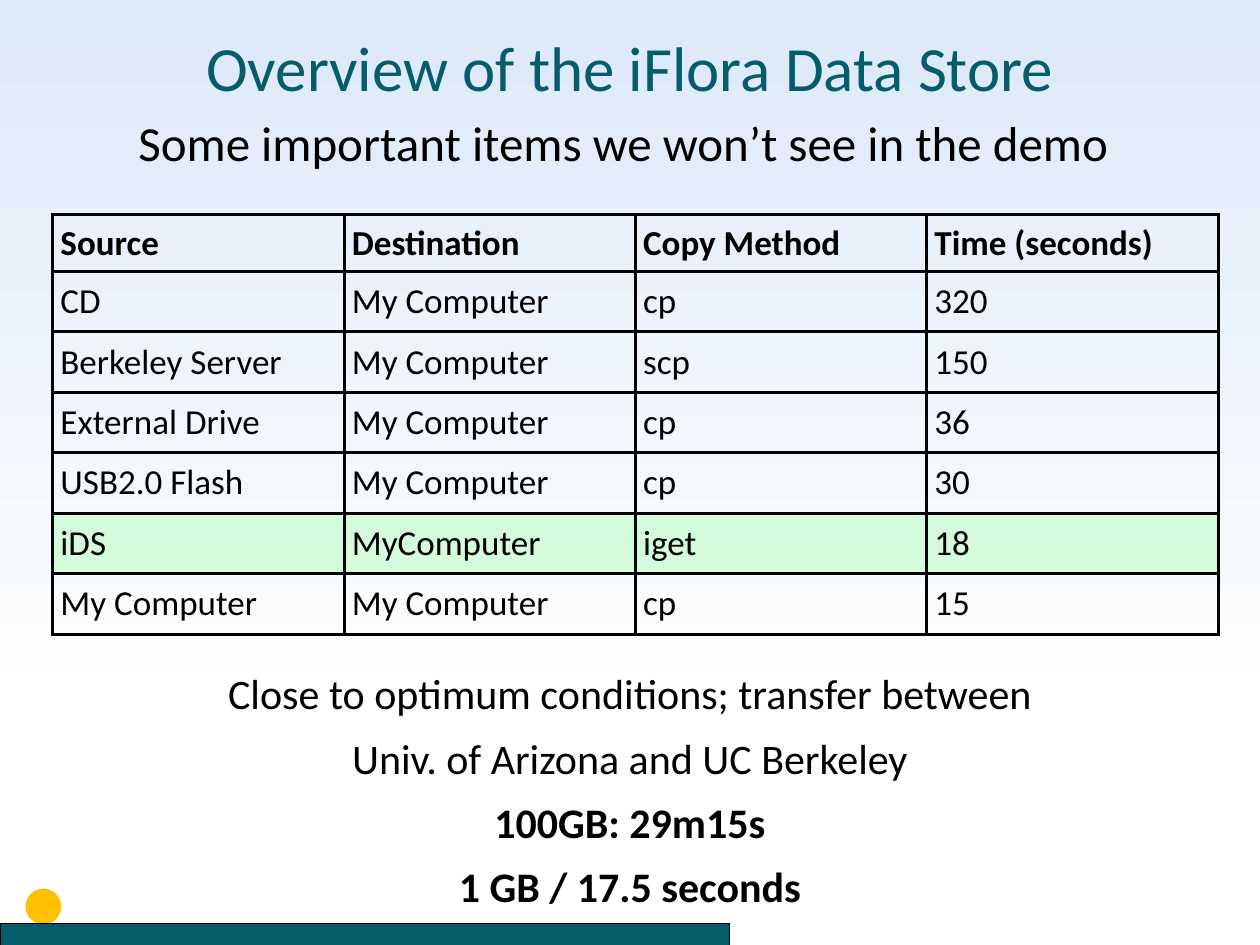
import pptx
import pptx.dml.color
import pptx.enum.shapes
import pptx.enum.text
import pptx.oxml
import pptx.oxml.ns
import pptx.util
import lxml.etree
from pptx.util import Inches

BLACK, TEAL, GOLD = "000000", "055C6B", "FFC000"


def color(hex_code):
    return pptx.dml.color.RGBColor.from_string(hex_code)


def style(paragraph, size, hex_code=BLACK, bold=False):
    paragraph.font.name = "Calibri"
    paragraph.font.size = pptx.util.Pt(size)
    paragraph.font.bold = bold
    paragraph.font.color.rgb = color(hex_code)


presentation = pptx.Presentation()
presentation.slide_width, presentation.slide_height = Inches(10), Inches(7.5)
slide = presentation.slides.add_slide(presentation.slide_layouts[6])

# Background: pale blue fading to white three quarters down
background = slide.background.fill
background.gradient()
background.gradient_angle = 270
for stop, position, hex_code in zip(background.gradient_stops, (0, 0.75), ("DCE9F9", "FFFFFF")):
    stop.position = position
    stop.color.rgb = color(hex_code)

# Footer dot and bar
SHAPES = pptx.enum.shapes.MSO_SHAPE
for kind, box, fill, outline, weight in [
    (SHAPES.OVAL, (0.21, 7.06, 0.27, 0.27), GOLD, GOLD, 1),
    (SHAPES.RECTANGLE, (0, 7.33, 5.79, 0.26), TEAL, BLACK, 0.75),
]:
    ornament = slide.shapes.add_shape(kind, *map(Inches, box))
    ornament.shadow.inherit = False
    ornament.fill.solid()
    ornament.fill.fore_color.rgb = color(fill)
    ornament.line.color.rgb = color(outline)
    ornament.line.width = pptx.util.Pt(weight)

# Title, subtitle and closing notes: box, wrap, size, colour, (line, bold)
CENTER, LEFT = pptx.enum.text.PP_ALIGN.CENTER, pptx.enum.text.PP_ALIGN.LEFT
for box, wrap, align, size, hex_code, lines in [
    ((0, 0.18, 10, 1.24), True, CENTER, 36, TEAL,
     [("Overview of the iFlora Data Store", False)]),
    ((1, 0.84, 7.98, 0.57), False, LEFT, 28, BLACK,
     [("Some important items we won’t see in the demo", False)]),
    ((0, 5.25, 10, 1.29), True, CENTER, 24, BLACK,
     [("Close to optimum conditions; transfer between", False),
      ("Univ. of Arizona and UC Berkeley", False),
      ("100GB: 29m15s", True),
      ("1 GB / 17.5 seconds", True)]),
]:
    frame = slide.shapes.add_textbox(*map(Inches, box)).text_frame
    frame.word_wrap = wrap
    for index, (line, bold) in enumerate(lines):
        paragraph = frame.add_paragraph() if index else frame.paragraphs[0]
        paragraph.text = line
        paragraph.alignment = align
        if index:
            paragraph.space_before = pptx.util.Pt(8)
        style(paragraph, size, hex_code, bold)

# Transfer times
transfers = [
    ("Source", "Destination", "Copy Method", "Time (seconds)"),
    ("CD", "My Computer", "cp", "320"),
    ("Berkeley Server", "My Computer", "scp", "150"),
    ("External Drive", "My Computer", "cp", "36"),
    ("USB2.0 Flash", "My Computer", "cp", "30"),
    ("iDS", "MyComputer", "iget", "18"),
    ("My Computer", "My Computer", "cp", "15"),
]
times = slide.shapes.add_table(
    len(transfers), 4, Inches(0.42), Inches(1.7), Inches(9.25), Inches(3.3)).table
times.first_row = times.horz_banding = False
for column in times.columns:
    column.width = Inches(9.25 / 4)

for row_index, entries in enumerate(transfers):
    times.rows[row_index].height = Inches(0.48 if row_index else 0.34)
    for column_index, entry in enumerate(entries):
        cell = times.cell(row_index, column_index)
        cell.text = entry
        cell.vertical_anchor = pptx.enum.text.MSO_ANCHOR.MIDDLE
        cell.margin_left = cell.margin_right = Inches(0.06)
        cell.margin_top = cell.margin_bottom = Inches(0.06)
        style(cell.text_frame.paragraphs[0], 20, bold=row_index == 0)

        # Only the iDS row is tinted, with a translucent green
        properties = cell._tc.get_or_add_tcPr()
        if entries[0] == "iDS":
            cell.fill.solid()
            cell.fill.fore_color.rgb = color("00FF00")
            tint = properties.find(".//" + pptx.oxml.ns.qn("a:srgbClr"))
            lxml.etree.SubElement(tint, pptx.oxml.ns.qn("a:alpha"), val="14000")
        else:
            cell.fill.background()

        # Borders come before the fill
        for place, side in enumerate(("lnL", "lnR", "lnT", "lnB")):
            properties.insert(place, pptx.oxml.parse_xml(
                f'<a:{side} {pptx.oxml.ns.nsdecls("a")} w="{pptx.util.Pt(2)}"><a:solidFill>'
                f'<a:srgbClr val="{BLACK}"/></a:solidFill></a:{side}>'))

presentation.save("out.pptx")
